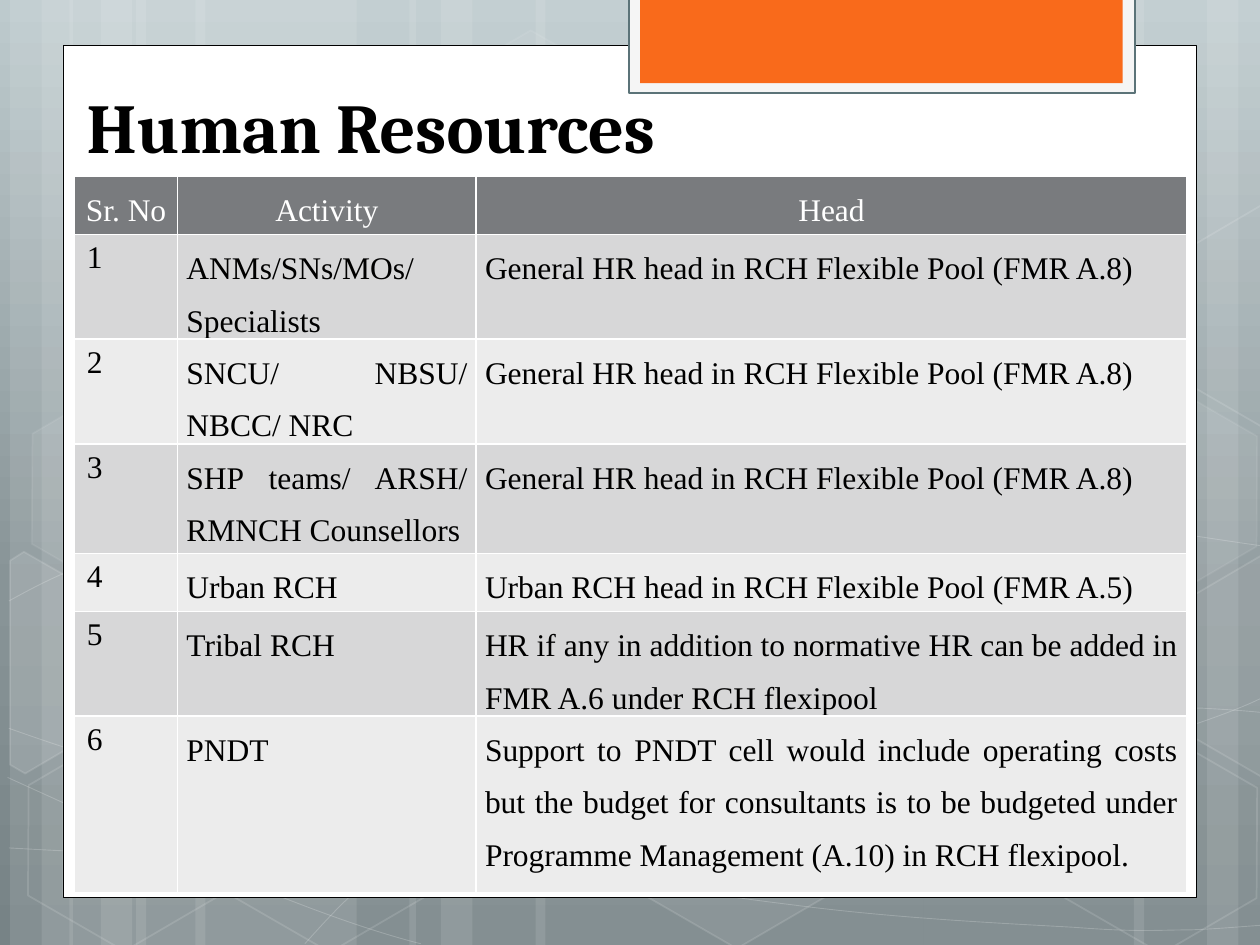
from typing import NamedTuple, Optional

from lxml.etree import SubElement
from pptx import Presentation
from pptx.dml.color import RGBColor
from pptx.enum.shapes import MSO_SHAPE
from pptx.enum.text import MSO_ANCHOR, PP_ALIGN
from pptx.oxml import parse_xml
from pptx.oxml.ns import nsdecls, qn
from pptx.util import Inches, Pt

# The slide is a grid of 10 columns by 7.5 rows
COLS, ROWS = 10, 7.5
LEFT = 0.59  # shared left edge of title and table
WHITE, BLACK = "FFFFFF", "000000"
BODY_FONT = "Times New Roman"


class Hexagon(NamedTuple):
    x: float
    y: float
    fill_alpha: int
    line_alpha: int


class Outline(NamedTuple):
    points: list
    fill_alpha: int


class Panel(NamedTuple):
    box: tuple
    fill: str
    line: Optional[str]
    weight: float


STRIPES = [  # left, width
    (1.08, 1.75), (0.08, 0.5), (0.33, 0.83), (1.55, 1.75), (0.55, 0.5), (0.8, 0.83),
    (7.33, 1.75), (9.58, 0.5), (9, 0.83), (4.25, 3.08), (3.25, 0.5), (3.5, 0.83),
]
# Each curve: a start point, then three points per Bezier segment
CURVES = [
    [(0.07, 6.73), (0.61, 6.76), (1.15, 6.79), (1.9, 6.78), (2.65, 6.77), (3.58, 6.75),
     (4.58, 6.65), (5.58, 6.55), (7, 6.36), (7.92, 6.17), (8.83, 5.98), (9.77, 5.68), (10.07, 5.51)],
    [(0.07, 4.77), (0.36, 4.61), (0.65, 4.46), (1.21, 4.31), (1.78, 4.16), (2.59, 3.94),
     (3.47, 3.87), (4.36, 3.8), (5.44, 3.79), (6.54, 3.87), (7.64, 3.95), (9.47, 4.26), (10.07, 4.34)],
    [(0.06, 6.17), (1.27, 6.72), (2.47, 7.27), (3.34, 7.49)],
    [(0.07, 5.78), (0.38, 5.89), (0.7, 6), (1.28, 6.16), (1.86, 6.31), (2.73, 6.56),
     (3.57, 6.73), (4.4, 6.9), (5.45, 7.08), (6.28, 7.18), (7.11, 7.29), (8, 7.33),
     (8.53, 7.36), (9.05, 7.4), (9.19, 7.38), (9.45, 7.38), (9.71, 7.37), (9.89, 7.35), (10.07, 7.34)],
    [(2.42, 7.49), (2.6, 7.29), (2.78, 7.09), (3.02, 6.91), (3.26, 6.73), (3.6, 6.53),
     (3.88, 6.39), (4.16, 6.25), (4.33, 6.19), (4.7, 6.09), (5.06, 5.99), (5.73, 5.85),
     (6.08, 5.78), (6.44, 5.71), (6.49, 5.71), (6.8, 5.69), (7.11, 5.66), (7.6, 5.63),
     (7.94, 5.62), (8.29, 5.61), (8.86, 5.62), (9.53, 5.62), (9.71, 5.63), (9.88, 5.64), (10.06, 5.66)],
]
HEXAGONS = [
    Hexagon(3.34, 0.36, 4, 8), Hexagon(4.97, 5.89, 6, 12), Hexagon(0.11, 5.91, 0, 12),
    Hexagon(0.14, 3.12, 7, 8), Hexagon(1.74, 5.92, 0, 12), Hexagon(8.34, 5.93, 0, 12),
    Hexagon(8.34, 3.14, 7, 8),
]
# Hexagons cut off by the slide's edges
CUT_HEXAGONS = [
    Outline([(0.08, 4.45), (0.19, 4.38), (0.96, 4.82), (0.95, 5.7), (0.2, 6.14), (0.08, 6.07)], 10),
    Outline([(9.26, 4.85), (10.01, 4.41), (10.09, 4.46), (10.09, 6.13), (10.02, 6.17), (9.26, 5.73)], 4),
    Outline([(9.26, 2.07), (10.01, 1.63), (10.1, 1.68), (10.09, 3.35), (10.02, 3.39), (9.26, 2.95)], 0),
]
PANELS = [
    Panel((0.5, 0.36, 9, 6.76), WHITE, BLACK, 0.5),
    Panel((4.99, -0.02, 4.02, 0.76), "F5F5F5", "5B7378", 1.25),
    Panel((5.08, -0.02, 3.83, 0.68), "F96A1B", None, 0),
]

COL_WIDTHS = [0.82, 2.37, 5.64]
ROW_HEIGHTS = [0.46, 0.83, 0.83, 0.87, 0.46, 0.83, 1.4]
HEADER = ("Sr. No", "Activity", "Head")
GENERAL = "General HR head in RCH Flexible Pool (FMR A.8)"
ACTIVITIES = [
    ("ANMs/SNs/MOs/ Specialists", GENERAL),
    ("SNCU/ NBSU/ NBCC/ NRC", GENERAL),
    ("SHP teams/ ARSH/ RMNCH Counsellors", GENERAL),
    ("Urban RCH", "Urban RCH head in RCH Flexible Pool (FMR A.5)"),
    ("Tribal RCH", "HR if any in addition to normative HR can be added in FMR A.6 under RCH flexipool"),
    ("PNDT", "Support to PNDT cell would include operating costs but the budget for consultants "
             "is to be budgeted under Programme Management (A.10) in RCH flexipool."),
]


def paint(fill, color: str, alpha: int = 100) -> None:
    fill.solid()
    fill.fore_color.rgb = RGBColor.from_string(color)
    if alpha < 100:
        clr = fill._xPr.find(qn("a:solidFill"))[0]
        SubElement(clr, qn("a:alpha")).set("val", str(alpha * 1000))


def style(sp, fill: Optional[str], fill_alpha: int = 100, line: Optional[str] = None,
          weight: float = 0, line_alpha: int = 100) -> None:
    sp.shadow.inherit = False
    if fill and fill_alpha:
        paint(sp.fill, fill, fill_alpha)
    else:
        sp.fill.background()
    if line:
        paint(sp.line.fill, line, line_alpha)
        sp.line.width = Pt(weight)
    else:
        sp.line.fill.background()


def add_preset(s, kind, x: float, y: float, w: float, h: float):
    return s.shapes.add_shape(kind, Inches(x), Inches(y), Inches(w), Inches(h))


def add_outline(s, points: list, close: bool):
    start, *rest = [(Inches(x), Inches(y)) for x, y in points]
    fb = s.shapes.build_freeform(*start)
    fb.add_line_segments(rest, close=close)
    return fb.convert_to_shape()


def add_curve(s, nodes: list):
    """Turn every three line segments into one Bezier segment."""
    sp = add_outline(s, nodes, False)
    outline = next(sp._element.iter(qn("a:path")))
    segments = outline.findall(qn("a:lnTo"))
    for i in range(0, len(segments), 3):
        bezier = SubElement(outline, qn("a:cubicBezTo"))
        for segment in segments[i:i + 3]:
            bezier.append(segment[0])
            outline.remove(segment)
    return sp


def set_background(s) -> None:
    stops = "".join(f'<a:gs pos="{pos * 1000}"><a:srgbClr val="{c}"/></a:gs>'
                    for pos, c in [(0, "BDCACD"), (62, "889497"), (100, "778386")])
    s.background.fill.solid()
    bg_pr = s.background._cSld.bg.bgPr
    bg_pr.replace(bg_pr[0], parse_xml(
        f'<a:gradFill {nsdecls("a")} rotWithShape="1"><a:gsLst>{stops}</a:gsLst>'
        '<a:lin ang="5400000" scaled="0"/></a:gradFill>'))


def add_backdrop(s) -> None:
    for x, w in STRIPES:
        style(add_preset(s, MSO_SHAPE.RECTANGLE, x, 0, w, ROWS), WHITE, 10)
    for nodes in CURVES:
        style(add_curve(s, nodes), None, 0, WHITE, 0.5, 20)
    for hexagon in HEXAGONS:
        sp = add_preset(s, MSO_SHAPE.HEXAGON, hexagon.x, hexagon.y, 1.75, 1.52)
        sp.adjustments[0] = 0.285
        sp.rotation = 30
        style(sp, WHITE, hexagon.fill_alpha, WHITE, 1, hexagon.line_alpha)
    for cut in CUT_HEXAGONS:
        style(add_outline(s, cut.points, True), WHITE, cut.fill_alpha, WHITE, 1, 12)
    for panel in PANELS:
        sp = add_preset(s, MSO_SHAPE.RECTANGLE, *panel.box)
        style(sp, panel.fill, 100, panel.line, panel.weight)


def format_run(p, size: float, font: str, color: str, bold: bool = False) -> None:
    f = p.runs[0].font
    f.size, f.name, f.bold = Pt(size), font, bold
    paint(f.fill, color)


def add_title(s, text: str) -> None:
    tf = s.shapes.add_textbox(Inches(LEFT), Inches(0.59), Inches(8.27), Inches(0.79)).text_frame
    tf.word_wrap = True
    tf.vertical_anchor = MSO_ANCHOR.BOTTOM
    tf.text = text
    format_run(tf.paragraphs[0], 40, "Cambria", BLACK, True)


def fill_cell(cell, text: str, row: int, col: int) -> None:
    cell.text = text
    p = cell.text_frame.paragraphs[0]
    format_run(p, 18, BODY_FONT, BLACK if row else WHITE)
    if row and col == 0:  # hanging indent for the numbers
        p._p.get_or_add_pPr().set("marL", str(Inches(0.38)))
        p._p.get_or_add_pPr().set("indent", str(-Inches(0.38)))
    else:
        p.line_spacing = Pt(29.9)
        p.alignment = PP_ALIGN.JUSTIFY if row else PP_ALIGN.CENTER
        cell.margin_left = cell.margin_right = Inches(0.07)
        cell.margin_top = cell.margin_bottom = 0
    # Borders come before the fill
    for side in "LRTB":
        ln = SubElement(cell._tc.get_or_add_tcPr(), qn(f"a:ln{side}"), w=str(Pt(1)))
        SubElement(SubElement(ln, qn("a:solidFill")), qn("a:srgbClr"), val=WHITE)
    paint(cell.fill, ("D7D7D8" if row % 2 else "ECECEC") if row else "797B7E")


def add_activity_table(s) -> None:
    rows = [HEADER] + [(str(n), *entry) for n, entry in enumerate(ACTIVITIES, 1)]
    table = s.shapes.add_table(len(rows), len(HEADER), Inches(LEFT), Inches(1.4),
                               Inches(sum(COL_WIDTHS)), Inches(sum(ROW_HEIGHTS))).table
    for column, width in zip(table.columns, COL_WIDTHS):
        column.width = Inches(width)
    for r, (row, height) in enumerate(zip(table.rows, ROW_HEIGHTS)):
        row.height = Inches(height)
        for c, text in enumerate(rows[r]):
            fill_cell(table.cell(r, c), text, r, c)


def main() -> None:
    prs = Presentation()
    prs.slide_width, prs.slide_height = Inches(COLS), Inches(ROWS)
    s = prs.slides.add_slide(prs.slide_layouts[6])
    set_background(s)
    add_backdrop(s)
    add_title(s, "Human Resources")
    add_activity_table(s)
    prs.save("out.pptx")


if __name__ == "__main__":
    main()
